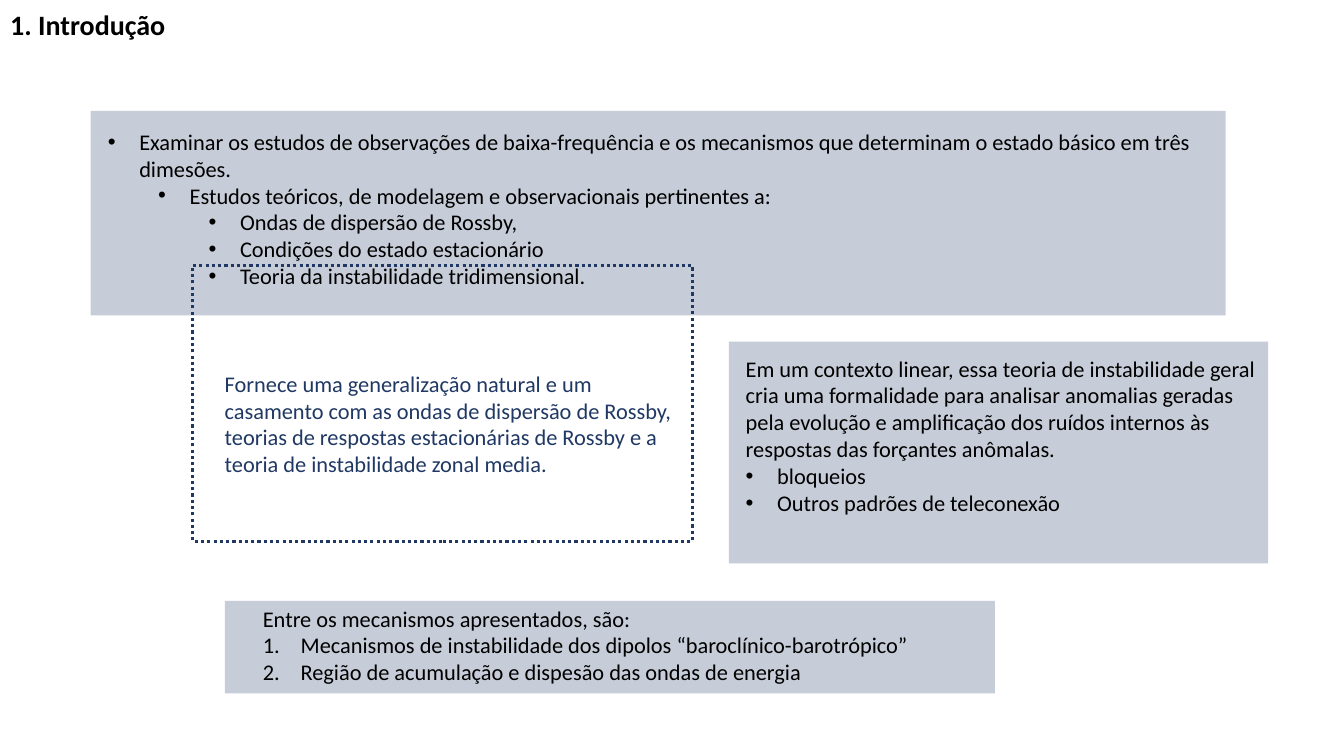
import pptx
import pptx.dml.color
import pptx.enum.dml
import pptx.enum.shapes
import pptx.enum.text
import pptx.oxml
import pptx.oxml.ns
import pptx.util
from lxml import etree

Pt = pptx.util.Pt
RGB = pptx.dml.color.RGBColor.from_string
qn = pptx.oxml.ns.qn
COLORS = {"navy": "203864", "black": "000000"}
HANG = {"bullet": 22.5, "number": 27}
LEVEL_STEP = 36


def write_text(sp, box, paragraphs, size=16, color="black", bold=False):
    """Place sp at box and fill it with (text, marker, level) paragraphs."""
    sp.left, sp.top, sp.width, sp.height = map(Pt, box)
    tf = sp.text_frame
    tf.word_wrap = True
    tf.auto_size = pptx.enum.text.MSO_AUTO_SIZE.NONE
    tf.vertical_anchor = pptx.enum.text.MSO_ANCHOR.TOP
    for i, (text, marker, level) in enumerate(paragraphs):
        p = tf.paragraphs[0] if i == 0 else tf.add_paragraph()
        p.level = level
        p.alignment = pptx.enum.text.PP_ALIGN.LEFT
        p.space_before = p.space_after = Pt(0)
        p.line_spacing = 1.0
        pPr = p._p.get_or_add_pPr()
        if marker:
            pPr.set("marL", str(Pt(HANG[marker] + LEVEL_STEP * level)))
            pPr.set("indent", str(-Pt(HANG[marker])))
        if marker == "bullet":
            etree.SubElement(pPr, qn("a:buFont")).set("typeface", "Arial")
            etree.SubElement(pPr, qn("a:buChar")).set("char", "•")
        elif marker == "number":
            etree.SubElement(pPr, qn("a:buAutoNum")).set("type", "arabicPeriod")
        r = p.add_run()
        r.text = text
        r.font.name = "Calibri"
        r.font.size = Pt(size)
        r.font.bold = bold
        r.font.color.rgb = RGB(COLORS[color])


prs = pptx.Presentation()
prs.slide_width, prs.slide_height = Pt(960), Pt(540)
s = prs.slides.add_slide(prs.slide_layouts[1])
title, body = s.placeholders

write_text(title, (0, 1.4, 825.8, 31.7), [("1. Introdução", None, 0)],
           size=20, bold=True)

# Tinted panels
panels = [(64.8, 79.2, 810.7, 146.2),
          (520.6, 244.1, 385.2, 158.4),
          (160.6, 429.1, 550.1, 66.2)]
for box in panels:
    panel = s.shapes.add_shape(pptx.enum.shapes.MSO_SHAPE.RECTANGLE, *map(Pt, box))
    panel.shadow.inherit = False
    panel.line.fill.background()
    panel.fill.solid()
    panel.fill.fore_color.rgb = RGB(COLORS["navy"])
    tint = panel.element.spPr.find(qn("a:solidFill"))[0]
    etree.SubElement(tint, qn("a:alpha")).set("val", "25000")

# Goals list, in front of the panels
panel.element.addnext(body.element)
write_text(body, (69.8, 87.8, 805.7, 123.8), [
    ("Examinar os estudos de observações de baixa-frequência e os mecanismos "
     "que determinam o estado básico em três dimesões.", "bullet", 0),
    ("Estudos teóricos, de modelagem e observacionais pertinentes a:", "bullet", 1),
    ("Ondas de dispersão de Rossby,", "bullet", 2),
    ("Condições do estado estacionário", "bullet", 2),
    ("Teoria da instabilidade tridimensional.", "bullet", 2),
])

# Dotted frame around the theory and its generalization
frame = s.shapes.add_shape(pptx.enum.shapes.MSO_SHAPE.RECTANGLE,
                           Pt(137.5), Pt(189.4), Pt(357.1), Pt(197.3))
frame.shadow.inherit = False
frame.fill.background()
frame.line.color.rgb = RGB(COLORS["navy"])
frame.line.width = Pt(2.25)
frame.line.dash_style = pptx.enum.dml.MSO_LINE.ROUND_DOT

notes = [
    ((153.4, 260.6, 342, 104.4), "navy", [
        ("Fornece uma generalização natural e um casamento com as ondas de "
         "dispersão de Rossby, teorias de respostas estacionárias de Rossby e a "
         "teoria de instabilidade zonal media.", None, 0)]),
    ((525.6, 249.8, 379.4, 143.3), "black", [
        ("Em um contexto linear, essa teoria de instabilidade geral cria uma "
         "formalidade para analisar anomalias geradas pela evolução e "
         "amplificação dos ruídos internos às respostas das forçantes anômalas.",
         None, 0),
        ("bloqueios", "bullet", 0),
        ("Outros padrões de teleconexão", "bullet", 0)]),
    ((180.7, 428.4, 573.1, 65.5), "black", [
        ("Entre os mecanismos apresentados, são:", None, 0),
        ("Mecanismos de instabilidade dos dipolos “baroclínico-barotrópico”",
         "number", 0),
        ("Região de acumulação e dispesão das ondas de energia", "number", 0)]),
]
for box, color, paragraphs in notes:
    write_text(s.shapes.add_textbox(*map(Pt, box)), box, paragraphs, color=color)

prs.save("out.pptx")
